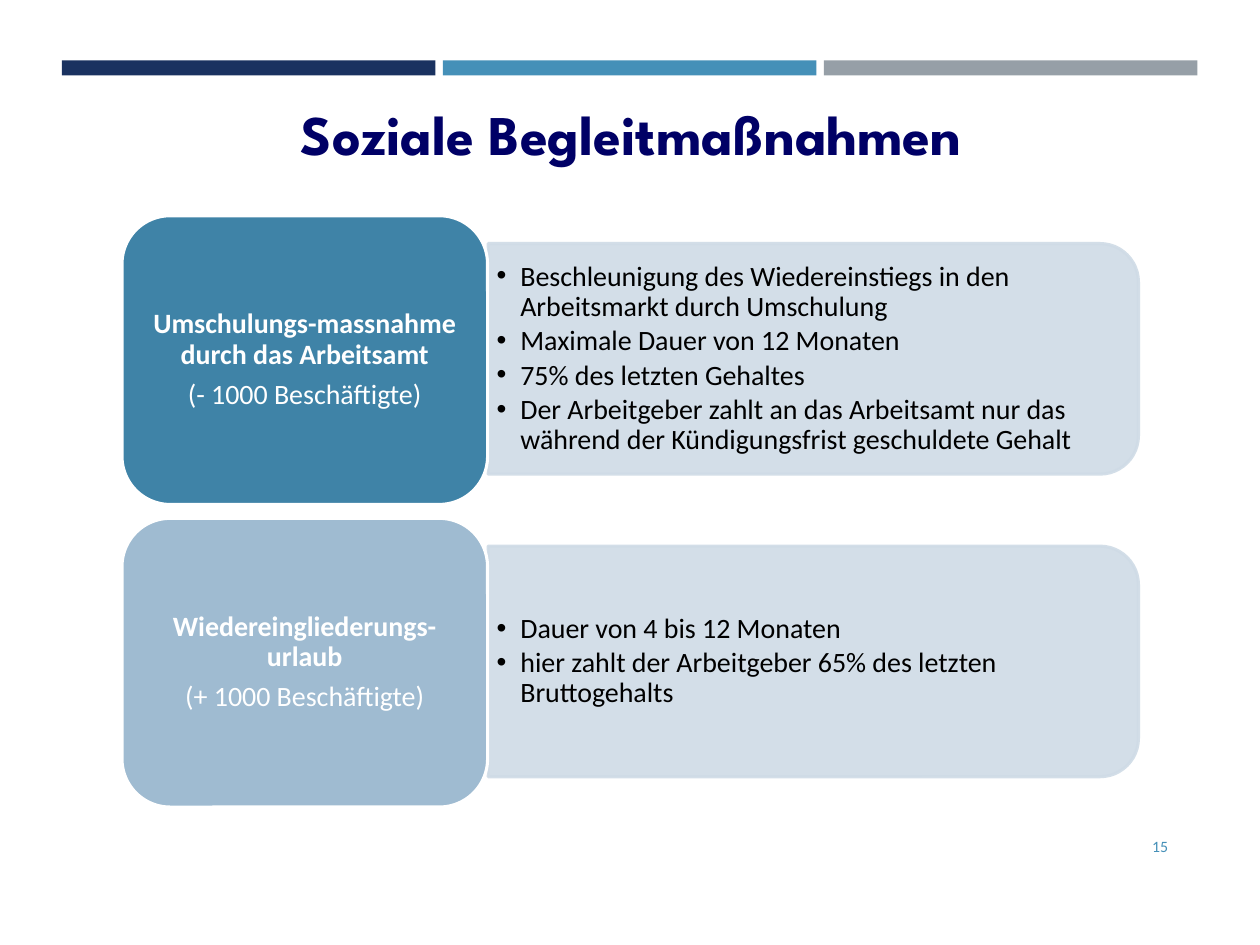
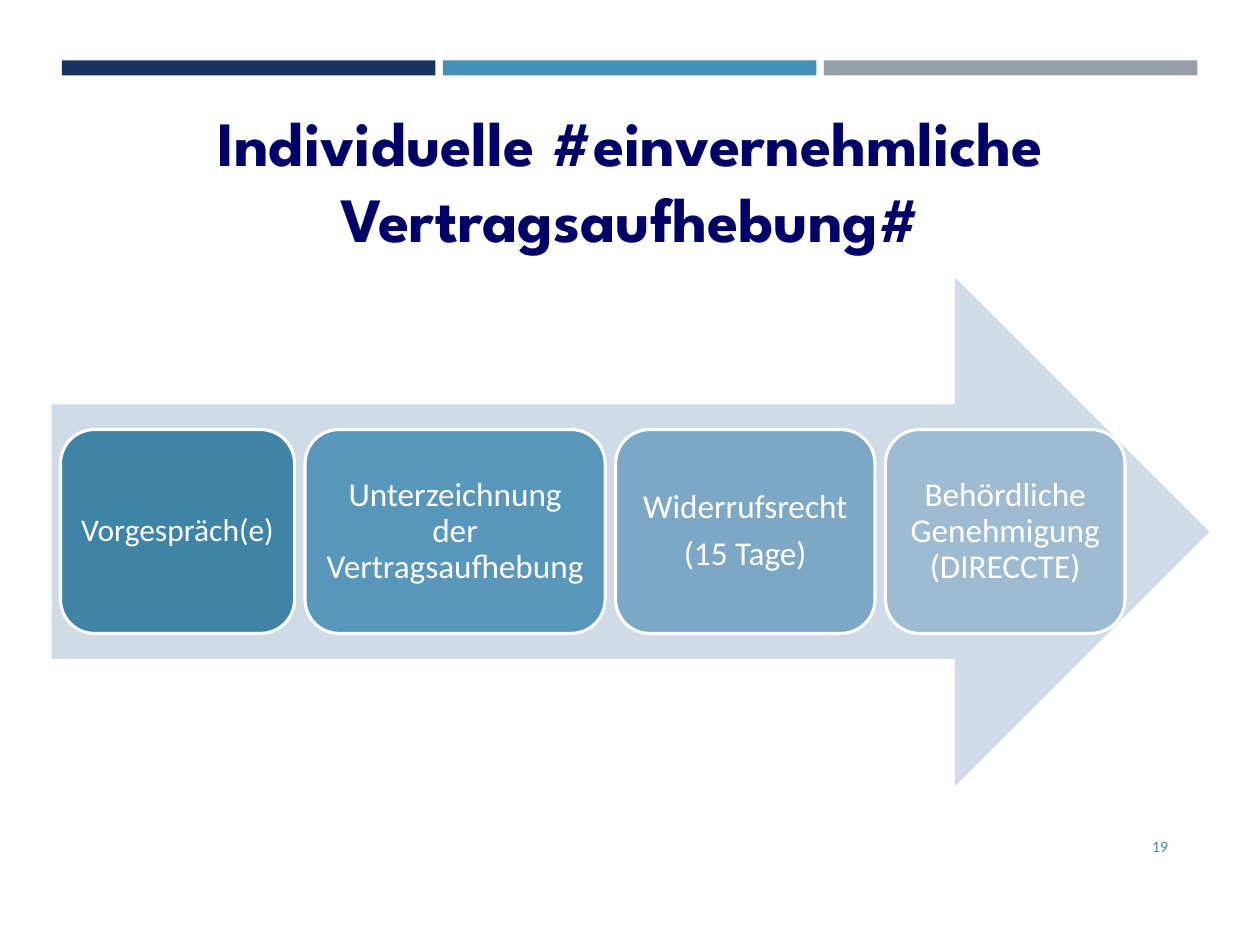
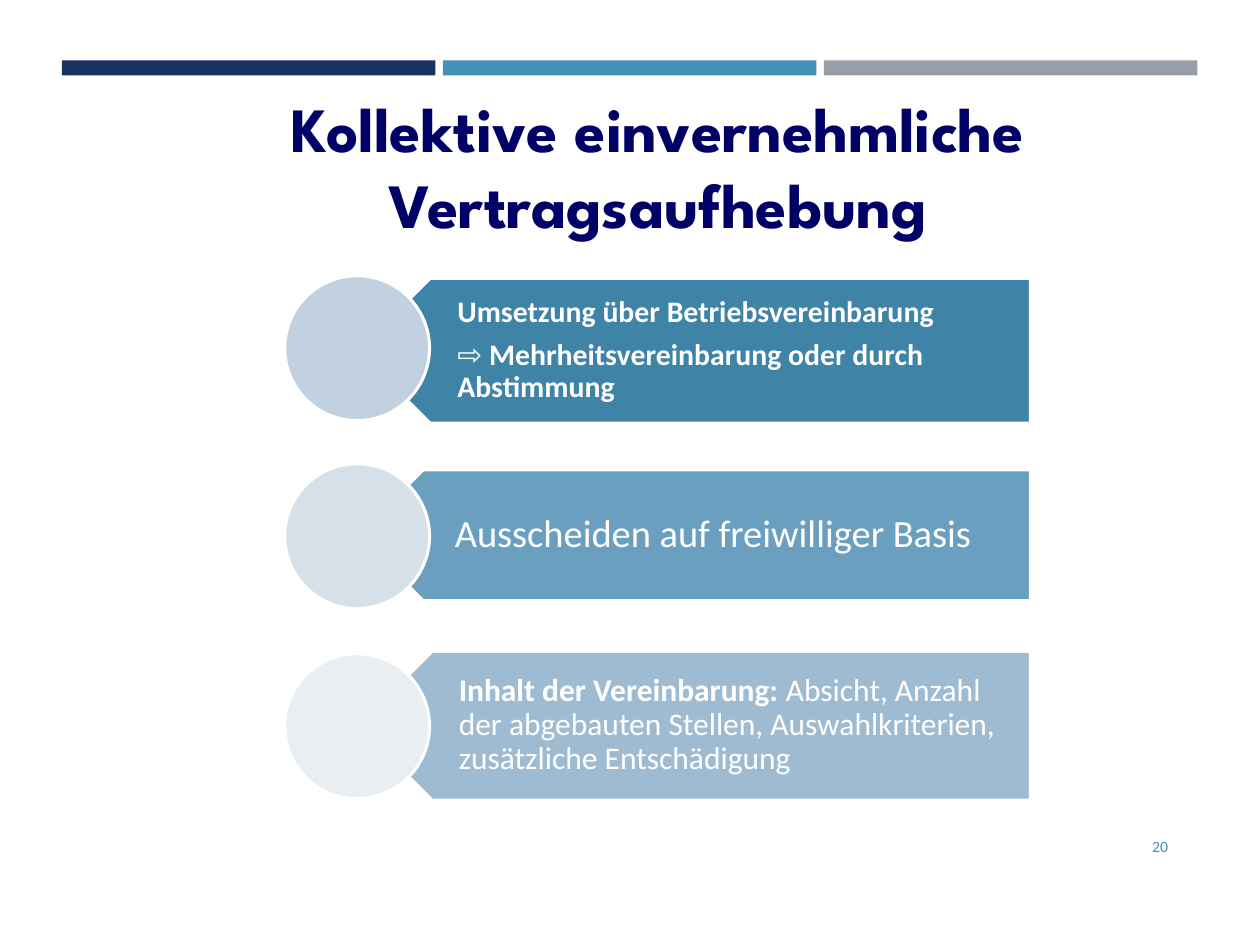
"""Build three slides on social measures and the termination of contracts by agreement."""
from lxml import etree
from pptx import Presentation
from pptx.dml.color import RGBColor
from pptx.enum import shapes, text
from pptx.oxml import ns
from pptx.util import Cm, Pt

COLORS = {
    "navy": "1A3260", "blue": "4590B8", "gray": "969FA7", "title": "000066",
    "pale": "CFDBE6", "deep": "3F83A7", "medium": "5996BB", "sky": "6B9FC0",
    "soft": "7DA8C5", "light": "9FBBD1", "white": "FFFFFF", "black": "000000",
    "circle_1": "C1D1DF", "circle_2": "D5E0E9", "circle_3": "E9EEF3",
}
KINDS = shapes.MSO_SHAPE
ALIGN = text.PP_ALIGN
ANCHOR = text.MSO_ANCHOR


def add_box(slide, kind, left, top, width, height, fill, line=None, alpha=None):
    shape = slide.shapes.add_shape(kind, Cm(left), Cm(top), Cm(width), Cm(height))
    shape.shadow.inherit = False
    shape.fill.solid()
    shape.fill.fore_color.rgb = RGBColor.from_string(COLORS[fill])
    if line:
        shape.line.color.rgb = RGBColor.from_string(COLORS[line])
        shape.line.width = Pt(1.75)
    else:
        shape.line.fill.background()
    if alpha:
        for color in shape.element.spPr.iter(ns.qn("a:srgbClr")):
            etree.SubElement(color, ns.qn("a:alpha"), val=str(alpha * 1000))
    return shape


def write(shape, paragraphs, size, color="white", font="Calibri", align=ALIGN.CENTER,
          anchor=ANCHOR.MIDDLE, insets=(0.25, 0.13, 0.25, 0.13), spacing=0.9,
          after=0.0, bullet=False):
    frame = shape.text_frame
    frame.word_wrap = True
    frame.auto_size = text.MSO_AUTO_SIZE.NONE
    frame.vertical_anchor = anchor
    (frame.margin_left, frame.margin_top,
     frame.margin_right, frame.margin_bottom) = [Cm(inset) for inset in insets]
    for index, runs in enumerate(paragraphs):
        paragraph = frame.paragraphs[0] if index == 0 else frame.add_paragraph()
        if bullet:
            properties = paragraph._p.get_or_add_pPr()
            properties.set("marL", str(Cm(0.48)))
            properties.set("indent", str(-Cm(0.48)))
            etree.SubElement(properties, ns.qn("a:buFont"), typeface="Arial")
            etree.SubElement(properties, ns.qn("a:buChar"), char="•")
        paragraph.alignment = align
        paragraph.line_spacing = spacing
        paragraph.space_before = Pt(0)
        paragraph.space_after = Pt(round(size * after, 1))
        for words, bold in runs:
            run = paragraph.add_run()
            run.text = words
            run.font.name = font
            run.font.size = Pt(size)
            run.font.bold = bold
            run.font.color.rgb = RGBColor.from_string(COLORS[color])


presentation = Presentation()
presentation.slide_width = Cm(25.4)
presentation.slide_height = Cm(19.05)
two_lists, title_only = presentation.slide_layouts[3], presentation.slide_layouts[5]

pages = [
    (two_lists, "Soziale Begleitmaßnahmen", 32, (1.8, 1.88, 21.87, 1.63), "15"),
    (title_only, "Individuelle #einvernehmliche Vertragsaufhebung#", 36,
     (1.73, 1.96, 21.95, 3.33), "19"),
    (title_only, "Kollektive einvernehmliche Vertragsaufhebung", 36,
     (2.29, 1.68, 21.95, 3.33), "20"),
]
slides = []
for layout, heading, size, place, number in pages:
    slide = presentation.slides.add_slide(layout)
    title = slide.shapes.title
    title.left, title.top, title.width, title.height = [Cm(length) for length in place]
    write(title, [[(heading, True)]], size, color="title", font="League Spartan",
          anchor=ANCHOR.TOP, spacing=1.0)
    page_number = slide.shapes.add_textbox(Cm(21.67), Cm(16.54), Cm(2.13), Cm(1.02))
    write(page_number, [[(number, False)]], 9, color="blue", align=ALIGN.RIGHT, spacing=1.0)
    slides.append(slide)
measures_slide, individual_slide, collective_slide = slides

master_tree = presentation.slide_master.shapes.element
for index, fill in enumerate(["navy", "blue", "gray"]):
    band = add_box(measures_slide, KINDS.RECTANGLE, 1.25 + 7.68 * index, 1.22, 7.53, 0.3, fill)
    band.element.nvSpPr.cNvPr.set("id", str(101 + index))
    master_tree.insert(2 + index, band.element)

measures = [
    ("Umschulungs-massnahme durch das Arbeitsamt", "(- 1000 Beschäftigte)", "deep",
     ["Beschleunigung des Wiedereinstiegs in den Arbeitsmarkt durch Umschulung",
      "Maximale Dauer von 12 Monaten",
      "75% des letzten Gehaltes",
      "Der Arbeitgeber zahlt an das Arbeitsamt nur das während der Kündigungsfrist "
      "geschuldete Gehalt"]),
    ("Wiedereingliederungs-urlaub", "(+ 1000 Beschäftigte)", "light",
     ["Dauer von 4 bis 12 Monaten",
      "hier zahlt der Arbeitgeber 65% des letzten Bruttogehalts"]),
]
for index, (name, staff, fill, points) in enumerate(measures):
    top = 4.35 + 6.1 * index
    panel = add_box(measures_slide, KINDS.ROUND_2_SAME_RECTANGLE, 14.07, top - 3.67, 4.65, 13.11,
                    "pale", line="pale", alpha=90)
    panel.rotation = 90
    details = measures_slide.placeholders[index + 1]
    details.left, details.top, details.width, details.height = (
        Cm(9.83), Cm(top + 0.79), Cm(12.88), Cm(4.19))
    write(details, [[(point, False)] for point in points], 16, color="black",
          align=ALIGN.LEFT, insets=(0.18, 0.08, 0.18, 0.08), after=0.15, bullet=True)
    measures_slide.shapes.element.append(details.element)
    card = add_box(measures_slide, KINDS.ROUNDED_RECTANGLE, 2.46, top, 7.37, 5.82,
                   fill, line="white")
    write(card, [[(name, True)], [(staff, False)]], 16,
          insets=(0.18, 0.08, 0.18, 0.08), after=0.35)

add_box(individual_slide, KINDS.RIGHT_ARROW, 1.04, 5.59, 23.34, 10.26, "pale")
steps = [
    (["Vorgespräch(e)"], 4.72, 18, "deep"),
    (["Unterzeichnung der Vertragsaufhebung"], 6.05, 19, "medium"),
    (["Widerrufsrecht", "(15 Tage)"], 5.23, 19, "soft"),
    (["Behördliche Genehmigung (DIRECCTE)"], 4.83, 19, "light"),
]
left = 1.22
for lines, width, size, fill in steps:
    step = add_box(individual_slide, KINDS.ROUNDED_RECTANGLE, left, 8.66, width, 4.11,
                   fill, line="white")
    write(step, [[(line, False)] for line in lines], size, insets=(0.19,) * 4, after=0.35)
    left += width + 0.21

agreements = [
    ([[("Umsetzung über Betriebsvereinbarung", True)],
      [("⇨ ", False), ("Mehrheitsvereinbarung oder durch Abstimmung", True)]],
     17, 5.61, 2.92, 7.92, 0.33, "deep", 5.56, "circle_1"),
    ([[("Ausscheiden auf freiwilliger Basis", False)]],
     22, 9.47, 2.64, 7.87, 0.43, "sky", 9.35, "circle_2"),
    ([[("Inhalt der Vereinbarung: ", True),
       ("Absicht, Anzahl der abgebauten Stellen, Auswahlkriterien, zusätzliche Entschädigung",
        False)]],
     18, 13.13, 3.0, 7.95, 0.36, "light", 13.18, "circle_3"),
]
for paragraphs, size, top, height, left, inset, fill, circle_top, circle_fill in agreements:
    banner = add_box(collective_slide, KINDS.PENTAGON, 7.21, top, 13.56, height,
                     fill, line="white")
    banner.rotation = 180
    label = collective_slide.shapes.add_textbox(Cm(left), Cm(top), Cm(20.77 - left), Cm(height))
    write(label, paragraphs, size, align=ALIGN.LEFT,
          insets=(1.3, inset / 2, inset, inset / 2), after=0.35)
    add_box(collective_slide, KINDS.OVAL, 5.74, circle_top, 2.92, 2.92,
            circle_fill, line="white")

presentation.save("out.pptx")
